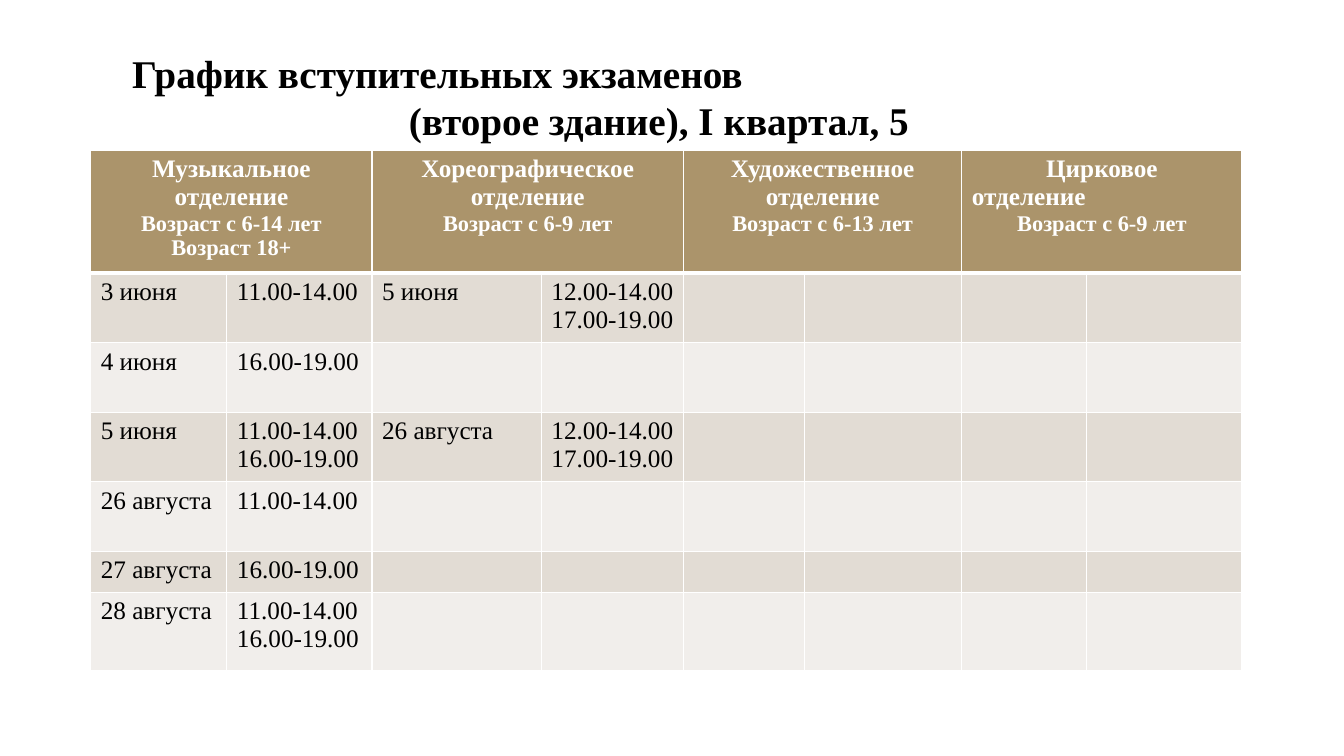
import pptx
import pptx.util
import pptx.dml.color
import pptx.enum.text
import pptx.oxml
import pptx.oxml.ns

Inches = pptx.util.Inches
ALIGN = pptx.enum.text.PP_ALIGN
FONT = "Times New Roman"


def write(frame, lines, bold, hue):
    """Fill a text frame with (text, size, alignment) lines."""
    for i, (text, size, align) in enumerate(lines):
        para = frame.paragraphs[0] if i == 0 else frame.add_paragraph()
        para.alignment = align
        look = {"name": FONT, "size": pptx.util.Pt(size), "bold": bold}
        run = para.add_run()
        run.text = text
        for font in (para.font, run.font):
            for key, value in look.items():
                setattr(font, key, value)
            font.color.rgb = color(hue)


def color(hue):
    return pptx.dml.color.RGBColor.from_string(hue)


deck = pptx.Presentation()
deck.slide_width, deck.slide_height = Inches(13.33), Inches(7.5)
slide = deck.slides.add_slide(deck.slide_layouts[5])

# Title
title = slide.shapes.title
place = {"left": 1.21, "top": 0.44, "width": 10.65, "height": 1.04}
for key, value in place.items():
    setattr(title, key, Inches(value))
frame = title.text_frame
frame.word_wrap = True
frame.auto_size = pptx.enum.text.MSO_AUTO_SIZE.NONE
frame.vertical_anchor = pptx.enum.text.MSO_ANCHOR.TOP
write(frame, [("График вступительных экзаменов", 28, ALIGN.LEFT),
              ("(второе здание), I квартал, 5", 28, ALIGN.CENTER)],
      True, "000000")

# Table content
heads = [
    [("Музыкальное отделение", 18, ALIGN.CENTER),
     ("Возраст с 6-14 лет", 16, ALIGN.CENTER),
     ("Возраст 18+", 16, ALIGN.CENTER)],
    [("Хореографическое отделение", 18, ALIGN.CENTER),
     ("Возраст с 6-9 лет", 16, ALIGN.CENTER)],
    [("Художественное отделение", 18, ALIGN.CENTER),
     ("Возраст с 6-13 лет", 16, ALIGN.CENTER)],
    [("Цирковое", 18, ALIGN.CENTER),
     ("отделение", 18, ALIGN.LEFT),
     ("Возраст с 6-9 лет", 16, ALIGN.CENTER)],
]
early, late = "11.00-14.00", "16.00-19.00"
dance = ["12.00-14.00", "17.00-19.00"]
dates = [
    [["3 июня"], [early], ["5 июня"], dance],
    [["4 июня"], [late]],
    [["5 июня"], [early, late], ["26 августа"], dance],
    [["26 августа"], [early]],
    [["27 августа"], [late]],
    [["28 августа"], [early, late]],
]

# Table grid
widths = [1.35, 1.44, 1.68, 1.41, 1.2, 1.56, 1.24, 1.54]
heights = [1.22, 0.69, 0.69, 0.69, 0.69, 0.4, 0.78]
table = slide.shapes.add_table(
    len(heights), len(widths), Inches(0.9), Inches(1.49),
    Inches(sum(widths)), Inches(sum(heights))).table
for col, width in zip(table.columns, widths):
    col.width = Inches(width)
for row, height in zip(table.rows, heights):
    row.height = Inches(height)

# Header cells span two columns each
for i, lines in enumerate(heads):
    cell = table.cell(0, 2 * i)
    cell.merge(table.cell(0, 2 * i + 1))
    write(cell.text_frame, lines, True, "FFFFFF")

# Dates and times; free cells keep the body size
for r, entry in enumerate(dates, 1):
    for c in range(len(widths)):
        texts = entry[c] if c < len(entry) else []
        cell = table.cell(r, c)
        write(cell.text_frame, [(t, 18, ALIGN.LEFT) for t in texts],
              False, "000000")
        if not texts:
            cell.text_frame.paragraphs[0].font.size = pptx.util.Pt(18)

# Fills and white borders, thicker below the header
for r in range(len(heights)):
    fill = "AB946B" if r == 0 else ("F1EEEB", "E2DCD4")[r % 2]
    for c in range(len(widths)):
        cell = table.cell(r, c)
        cell.fill.solid()
        cell.fill.fore_color.rgb = color(fill)
        props = cell._tc.get_or_add_tcPr()
        for i, side in enumerate("LRTB"):
            thick = (r, side) in ((0, "B"), (1, "T"))
            props.insert(i, pptx.oxml.parse_xml(
                f'<a:ln{side} {pptx.oxml.ns.nsdecls("a")} '
                f'w="{38100 if thick else 12700}"><a:solidFill>'
                f'<a:srgbClr val="FFFFFF"/></a:solidFill></a:ln{side}>'))

deck.save("out.pptx")
